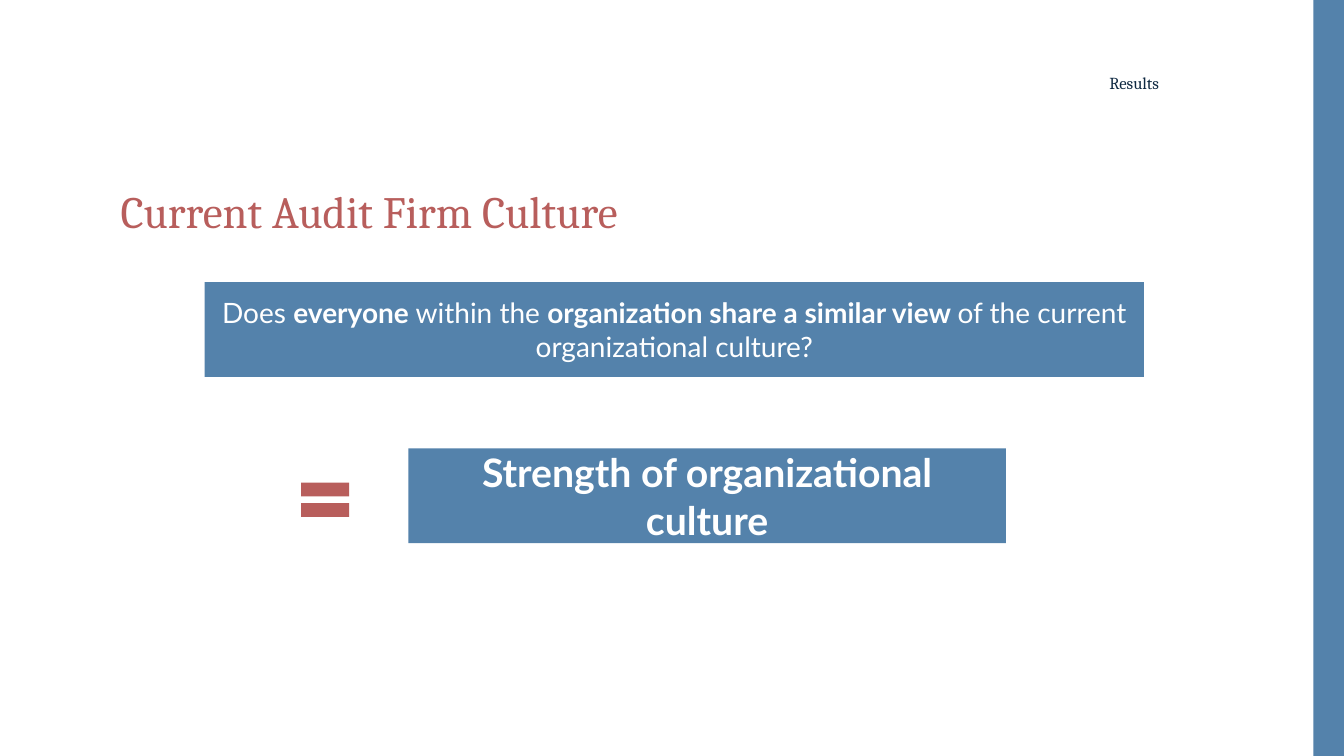
from pptx import Presentation
from pptx.dml.color import RGBColor
from pptx.enum.shapes import MSO_SHAPE as SHAPE
from pptx.enum.text import MSO_ANCHOR as ANCHOR, PP_ALIGN as ALIGN
from pptx.util import Cm, Pt

COLORS = {"blue": "5482AB", "red": "B85E5C", "navy": "0E2841", "white": "FFFFFF"}
HEADING_FONT, BODY_FONT = "Cambria", "Lato"


class SlideBuilder:
    def __init__(self, prs):
        self.slide = prs.slides.add_slide(prs.slide_layouts[6])

    def set_text(self, s, parts, size, font, color, align, anchor):
        """Fill a shape with one paragraph of (text, bold) parts."""
        tf = s.text_frame
        tf.word_wrap = True
        tf.vertical_anchor = anchor
        p = tf.paragraphs[0]
        p.alignment = align
        for text, bold in parts:
            r = p.add_run()
            r.text = text
            r.font.size = Pt(size)
            r.font.name = font
            r.font.bold = bold
            r.font.color.rgb = RGBColor.from_string(COLORS[color])
        return p

    def shape(self, kind, box, color):
        s = self.slide.shapes.add_shape(kind, *map(Cm, box))
        s.shadow.inherit = False
        s.fill.solid()
        s.fill.fore_color.rgb = RGBColor.from_string(COLORS[color])
        s.line.fill.background()
        return s

    def heading(self, text, box, size, color, align=ALIGN.LEFT, anchor=ANCHOR.TOP):
        s = self.slide.shapes.add_textbox(*map(Cm, box))
        return self.set_text(s, [(text, False)], size, HEADING_FONT, color, align, anchor)

    def banner(self, parts, box, size):
        s = self.shape(SHAPE.RECTANGLE, box, "blue")
        self.set_text(s, parts, size, BODY_FONT, "white", ALIGN.CENTER, ANCHOR.MIDDLE)


def main():
    prs = Presentation()
    prs.slide_width, prs.slide_height = Cm(33.87), Cm(19.05)
    slide = SlideBuilder(prs)

    slide.shape(SHAPE.RECTANGLE, (33.1, 0, 0.77, 19.05), "blue")
    title = slide.heading("Current Audit Firm Culture", (2.79, 4.65, 28.4, 2.59), 32, "red")
    title.line_spacing = 0.9
    slide.heading("Results", (12.52, 1.57, 16.94, 1.02), 12, "navy",
                  ALIGN.RIGHT, ANCHOR.MIDDLE)

    question = [
        ("Does ", False),
        ("everyone", True),
        (" within the ", False),
        ("organization share a similar view ", True),
        ("of the current organizational culture?", False),
    ]
    slide.banner(question, (5.16, 7.11, 23.67, 2.39), 20)
    slide.shape(SHAPE.MATH_EQUAL, (7.37, 11.86, 1.65, 1.47), "red")
    slide.banner([("Strength of organizational culture", True)],
                 (10.29, 11.3, 15.06, 2.39), 28)

    prs.save("out.pptx")


if __name__ == "__main__":
    main()
